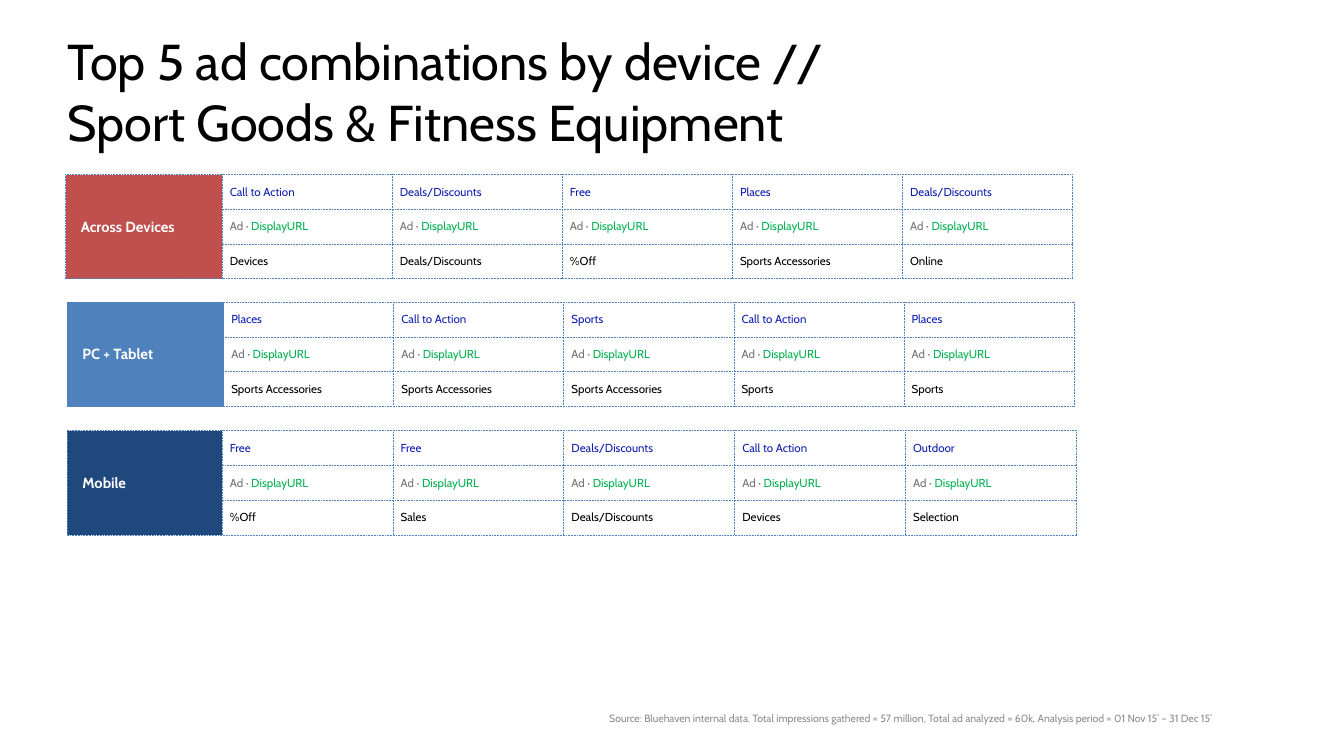
from lxml.etree import SubElement
from pptx import Presentation
from pptx.dml.color import RGBColor
from pptx.enum.text import MSO_ANCHOR as Anchor, MSO_AUTO_SIZE as AutoSize, PP_ALIGN as Align
from pptx.oxml.ns import qn
from pptx.util import Emu, Pt

SCALE = 9144
BLUE = "4F81BD"
AD_LINE = [("Ad · ", "737373"), ("DisplayURL", "00B050")]
ROW_HEIGHT = 46

DEVICES = [
    ("Across Devices", "C0504D", (87, 231), (207, 225),
     ["Call to Action", "Deals/Discounts", "Free", "Places", "Deals/Discounts"],
     ["Devices", "Deals/Discounts", "%Off", "Sports Accessories", "Online"]),
    ("PC + Tablet", BLUE, (89, 400), (207, 225),
     ["Places", "Call to Action", "Sports", "Call to Action", "Places"],
     ["Sports Accessories", "Sports Accessories", "Sports Accessories", "Sports", "Sports"]),
    ("Mobile", "1F497D", (89, 570), (205, 226),
     ["Free", "Free", "Deals/Discounts", "Call to Action", "Outdoor"],
     ["%Off", "Sales", "Deals/Discounts", "Devices", "Selection"]),
]


def px(length):
    return Emu(length * SCALE)


def colour(hex_value):
    return RGBColor.from_string(hex_value)


def add_text(paragraph, text, size=11, color="000000", bold=False):
    paragraph.alignment = Align.LEFT
    for index, line in enumerate(text.split("\n")):
        if index:
            paragraph.add_line_break()
        run = paragraph.add_run()
        run.text = line
        run.font.name = "Cabin"
        run.font.size = Pt(size)
        run.font.bold = bold
        run.font.color.rgb = colour(color)


def place_text(shape, box, text, **text_format):
    shape.left, shape.top, shape.width, shape.height = map(px, box)
    frame = shape.text_frame
    frame.margin_left = frame.margin_right = frame.margin_top = frame.margin_bottom = 0
    frame.word_wrap = True
    frame.auto_size = AutoSize.NONE
    frame.vertical_anchor = Anchor.TOP
    add_text(frame.paragraphs[0], text, **text_format)


def style_cell(cell, fill, margin_x, margin_y):
    properties = cell._tc.get_or_add_tcPr()
    for side in ("a:lnL", "a:lnR", "a:lnT", "a:lnB"):
        line = SubElement(properties, qn(side), w=str(Pt(1)))
        SubElement(SubElement(line, qn("a:solidFill")), qn("a:srgbClr"), val=BLUE)
        SubElement(line, qn("a:prstDash"), val="dot")
    cell.fill.solid()
    cell.fill.fore_color.rgb = colour(fill)
    cell.margin_left = cell.margin_right = px(margin_x)
    cell.margin_top = cell.margin_bottom = px(margin_y)
    cell.vertical_anchor = Anchor.MIDDLE


def add_device_table(slide, label, fill, position, widths, headlines, descriptions):
    left, top = position
    label_width, ad_width = widths
    column_widths = [label_width] + [ad_width] * len(headlines)
    box = (left, top, sum(column_widths), 3 * ROW_HEIGHT)
    table = slide.shapes.add_table(3, len(column_widths), *map(px, box)).table
    table.first_row = table.horz_banding = False
    for column, width in zip(table.columns, column_widths):
        column.width = px(width)

    for row in range(3):
        style_cell(table.cell(row, 0), fill, 20, 0)
    table.cell(0, 0).merge(table.cell(2, 0))
    add_text(table.cell(0, 0).text_frame.paragraphs[0], label, size=14, color="FFFFFF", bold=True)

    for column, (headline, description) in enumerate(zip(headlines, descriptions), 1):
        ad_rows = [[(headline, "1020B0")], AD_LINE, [(description, "000000")]]
        for row, parts in enumerate(ad_rows):
            cell = table.cell(row, column)
            style_cell(cell, "FFFFFF", 10, 5)
            for text, color in parts:
                add_text(cell.text_frame.paragraphs[0], text, color=color)


def main():
    presentation = Presentation()
    presentation.slide_width, presentation.slide_height = px(1778), px(1000)
    slide = presentation.slides.add_slide(presentation.slide_layouts[5])
    place_text(slide.shapes.title, (89, 40, 1600, 162),
               "Top 5 ad combinations by device //\nSport Goods & Fitness Equipment", size=48)
    source_box = (806, 942, 883, 17)
    place_text(slide.shapes.add_textbox(0, 0, 0, 0), source_box,
               "Source: Bluehaven internal data. Total impressions gathered = 57 million, "
               "Total ad analyzed = 60k, Analysis period = 01 Nov 15’ – 31 Dec 15’",
               size=10, color="8C8C8C")
    for device in reversed(DEVICES):
        add_device_table(slide, *device)
    presentation.save("out.pptx")


if __name__ == "__main__":
    main()
